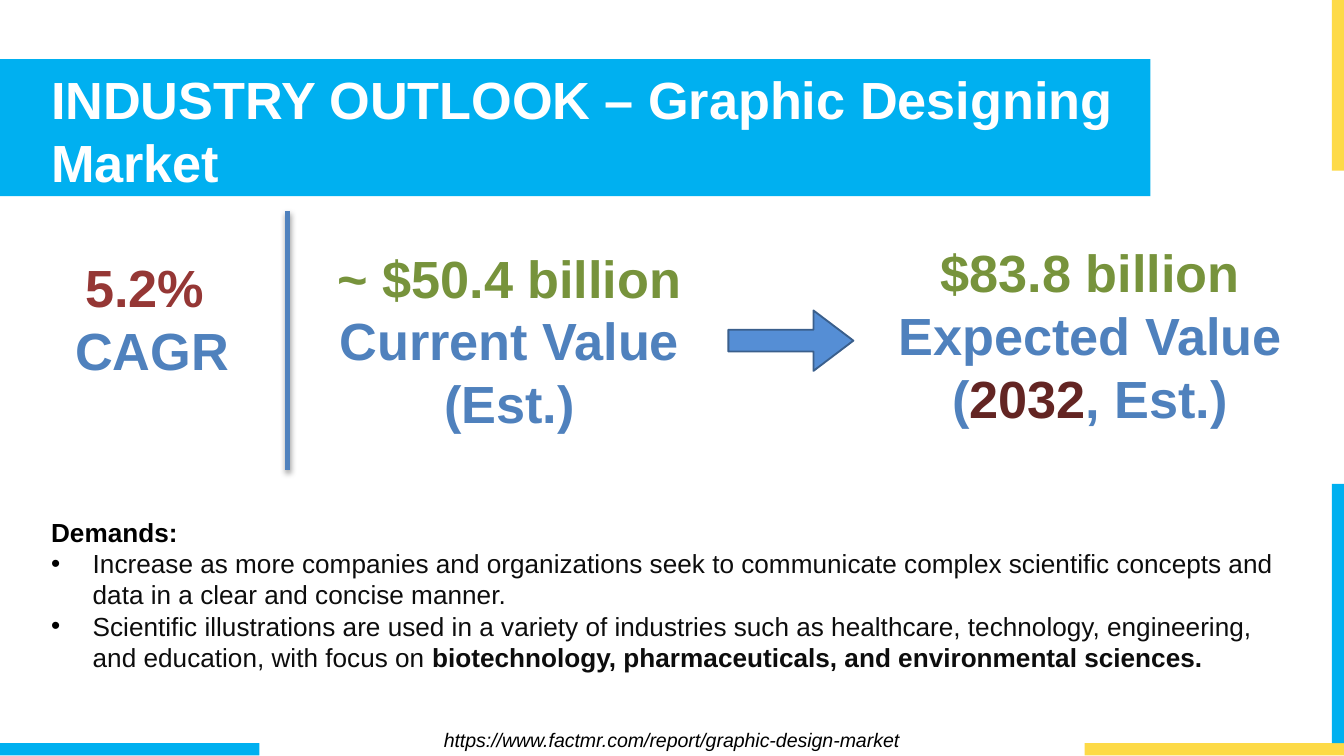
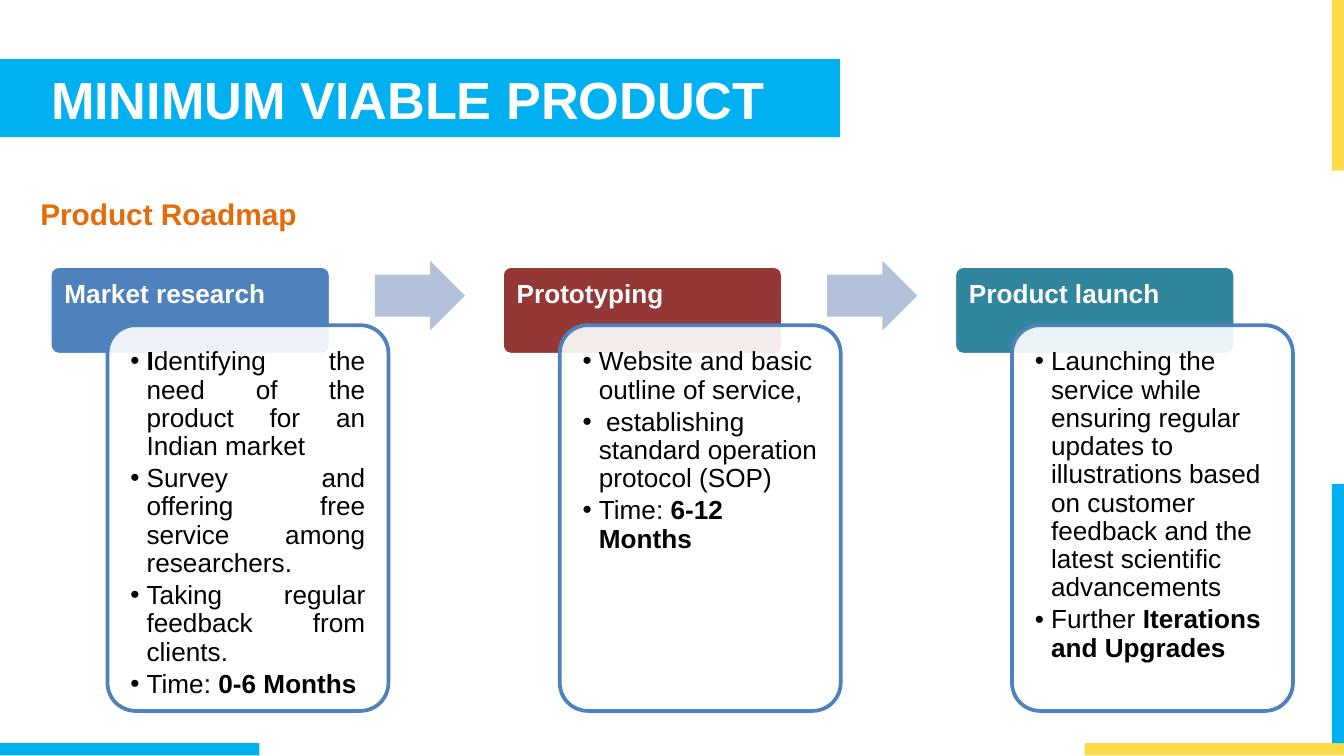
import pptx
import pptx.util
import pptx.dml.color
import pptx.enum.shapes
import pptx.enum.text
from lxml import etree
from pptx.oxml.ns import qn

Inches = pptx.util.Inches
Pt = pptx.util.Pt
RGB = pptx.dml.color.RGBColor
Shape = pptx.enum.shapes.MSO_SHAPE
Align = pptx.enum.text.PP_ALIGN
Anchor = pptx.enum.text.MSO_ANCHOR

FONT = "Arial"
WHITE = RGB(0xFF, 0xFF, 0xFF)
BLACK = RGB(0x00, 0x00, 0x00)
INK = RGB(0x0D, 0x0D, 0x0D)
SKY = RGB(0x00, 0xB0, 0xF0)
YELLOW = RGB(0xFD, 0xDA, 0x47)
BLUE = RGB(0x4F, 0x81, 0xBD)
ARROW = RGB(0x55, 0x8E, 0xD5)
EDGE = RGB(0x3A, 0x5F, 0x8C)
PALE = RGB(0xB3, 0xC1, 0xDB)
RED = RGB(0x95, 0x37, 0x35)
WINE = RGB(0x63, 0x25, 0x23)
GREEN = RGB(0x77, 0x93, 0x3C)
TEAL = RGB(0x31, 0x85, 0x9C)
ORANGE = RGB(0xE4, 0x6C, 0x0A)

# Content: a paragraph is a list of runs, a run is (text, style)
BARS = [
    ((8.07, 5.53, 1.93, 0.09), YELLOW),
    ((9.91, 3.6, 0.09, 1.93), SKY),
    ((0, 5.53, 1.93, 0.09), SKY),
    ((9.91, 0, 0.09, 1.27), YELLOW),
]
FIGURES = [
    ((0.12, 1.85, 2.02, 1.04),
     [[("5.2% ", {"color": RED})], [("CAGR", {"color": BLUE})]]),
    ((2.03, 1.78, 3.52, 1.51),
     [[("~ $50.4 billion", {"color": GREEN})],
      [("Current Value (Est.)", {"color": BLUE})]]),
    ((6.35, 1.74, 3.52, 1.51),
     [[("$83.8 billion", {"color": GREEN})],
      [("Expected Value (", {"color": BLUE}), ("2032", {"color": WINE}),
       (", Est.)", {"color": BLUE})]]),
]
DEMANDS = [
    [("Increase as more companies and organizations seek to communicate "
      "complex scientific concepts and data in a clear and concise manner.", {})],
    [("Scientific illustrations are used in a variety of industries such as "
      "healthcare, technology, engineering, and education, with focus on ", {}),
     ("biotechnology, pharmaceuticals, and environmental sciences.",
      {"bold": True})],
]
SOURCE = "https://www.factmr.com/report/graphic-design-market"
STAGES = [
    ("Market research", BLUE, Align.JUSTIFY, [
        [("I", {"bold": True}),
         ("dentifying the need of the product for an Indian market", {})],
        [("Survey and offering free service among researchers.", {})],
        [("Taking regular feedback from clients.", {})],
        [("Time: ", {}), ("0-6 Months", {"bold": True})],
    ]),
    ("Prototyping", RED, Align.LEFT, [
        [("Website and basic outline of service,", {})],
        [(" establishing standard operation protocol (SOP)", {})],
        [("Time: ", {}), ("6-12 Months", {"bold": True})],
    ]),
    ("Product launch", TEAL, Align.LEFT, [
        [("Launching the service while ensuring regular updates to "
          "illustrations based on customer feedback and the latest "
          "scientific advancements", {})],
        [("Further ", {}), ("Iterations and Upgrades", {"bold": True})],
    ]),
]


def style(font, size=None, color=None, bold=None, italic=None):
    if size:
        font.size, font.name = Pt(size), FONT
    if color is not None:
        font.color.rgb = color
    if bold is not None:
        font.bold = bold
    if italic is not None:
        font.italic = italic


def place(shape, box):
    shape.left, shape.top, shape.width, shape.height = map(Inches, box)


def frame(shape, inset=(0.1, 0.05, 0.1, 0.05)):
    text = shape.text_frame
    text.word_wrap = True
    text.auto_size = pptx.enum.text.MSO_AUTO_SIZE.NONE
    text.vertical_anchor = Anchor.TOP
    (text.margin_left, text.margin_top,
     text.margin_right, text.margin_bottom) = map(Inches, inset)
    return text


def write(text, runs, align=Align.LEFT, indent=0, hang=0, lines=1.0,
          after=0, **font):
    """Fill the empty first paragraph, or add one."""
    para = text.paragraphs[0]
    if para.runs:
        para = text.add_paragraph()
    props = para._p.get_or_add_pPr()
    props.set("marL", str(Inches(indent)))
    props.set("indent", str(-Inches(hang)))
    if hang:
        tint = etree.SubElement(props, qn("a:buClr"))
        etree.SubElement(tint, qn("a:srgbClr"), val=str(BLACK))
        etree.SubElement(props, qn("a:buFont"), typeface=FONT)
        etree.SubElement(props, qn("a:buChar"), char="•")
    else:
        etree.SubElement(props, qn("a:buNone"))
    para.alignment = align
    para.line_spacing = lines
    para.space_before, para.space_after = Pt(0), Pt(after)
    style(para.font, **font)
    for words, look in runs:
        run = para.add_run()
        run.text = words
        style(run.font, **look)


def draw(slide, kind, box, fill, line=None, width=1, adjust=()):
    shape = slide.shapes.add_shape(kind, *map(Inches, box))
    shape.shadow.inherit = False
    shape.fill.solid()
    shape.fill.fore_color.rgb = fill
    if line is None:
        shape.line.fill.background()
    else:
        shape.line.color.rgb = line
        shape.line.width = Pt(width)
    for spot, value in enumerate(adjust):
        shape.adjustments[spot] = value
    return shape


def start(deck, title, wide, high, span):
    """Slide with title band, edge bars, title and body placeholders."""
    slide = deck.slides.add_slide(deck.slide_layouts[1])
    head, body = slide.placeholders
    band = draw(slide, Shape.RECTANGLE, (0, 0.44, wide, high), SKY)
    bars = [draw(slide, Shape.RECTANGLE, box, fill) for box, fill in BARS]
    for shape in [band] + bars:
        head.element.addprevious(shape.element)
    place(head, (0.28, 0.45, span, 0.57))
    write(frame(head), [(title, {})], size=28, color=WHITE, bold=True)
    return slide, body


def outlook(deck):
    slide, body = start(
        deck, "INDUSTRY OUTLOOK – Graphic Designing Market", 8.56, 1.02, 8.19)

    # Demands
    place(body, (0.28, 3.79, 9.44, 1.28))
    text = frame(body)
    write(text, [("Demands:", {})], size=14, color=BLACK, bold=True)
    for runs in DEMANDS:
        write(text, runs, indent=0.31, hang=0.31, size=14, color=INK)

    # Key figures
    for box, rows in FIGURES:
        text = frame(slide.shapes.add_textbox(*map(Inches, box)))
        for runs in rows:
            write(text, runs, align=Align.CENTER, size=28, bold=True)

    # Divider with soft shadow
    rule = slide.shapes.add_connector(
        pptx.enum.shapes.MSO_CONNECTOR.STRAIGHT,
        *map(Inches, (2.14, 1.57, 2.14, 3.5)))
    rule.line.color.rgb = BLUE
    rule.line.width = Pt(3)
    effect = etree.SubElement(rule.element.spPr, qn("a:effectLst"))
    shade = etree.SubElement(
        effect, qn("a:outerShdw"), blurRad=str(Pt(3.1)), dist=str(Pt(1.6)),
        dir="5400000", rotWithShape="0")
    tint = etree.SubElement(shade, qn("a:srgbClr"), val=str(BLACK))
    etree.SubElement(tint, qn("a:alpha"), val="38000")

    draw(slide, Shape.RIGHT_ARROW, (5.42, 2.31, 0.93, 0.45), ARROW,
         line=EDGE, adjust=(0.36, 0.66))

    # Source
    note = slide.shapes.add_textbox(*map(Inches, (2.5, 5.37, 5, 0.28)))
    write(frame(note), [(SOURCE, {})], align=Align.CENTER,
          size=10.5, color=BLACK, italic=True)


def roadmap(deck):
    slide, body = start(deck, "MINIMUM VIABLE PRODUCT", 6.25, 0.58, 6.31)
    place(body, (0.05, 1.27, 9.69, 0.45))
    write(frame(body), [("Product Roadmap", {})], indent=0.15, lines=1.5,
          size=16, color=ORANGE, bold=True)

    # Stages: header, card on top, arrow to the next
    pitch = (7.1 - 0.37) / 2
    for spot, (name, fill, align, rows) in enumerate(STAGES):
        left = 0.37 + spot * pitch
        head = draw(slide, Shape.ROUNDED_RECTANGLE, (left, 1.98, 2.09, 0.66),
                    fill, line=WHITE, width=2, adjust=(0.1,))
        write(frame(head, (0.09, 0.09, 0.09, 0.06)), [(name, {})],
              lines=0.9, after=4.9, size=14, color=WHITE, bold=True)

        card = draw(slide, Shape.ROUNDED_RECTANGLE,
                    (left + 0.43, 2.42, 2.09, 2.87),
                    WHITE, line=BLUE, width=2, adjust=(0.1,))
        tint = card.element.spPr.find(qn("a:solidFill"))[0]
        etree.SubElement(tint, qn("a:alpha"), val="90000")
        text = frame(card, (0.11,) * 4)
        for runs in rows:
            write(text, runs, align=align, indent=0.12, hang=0.12,
                  lines=0.9, after=2.1, size=14, color=BLACK)

        if spot < len(STAGES) - 1:
            draw(slide, Shape.RIGHT_ARROW, (left + 2.42, 1.94, 0.67, 0.52),
                 PALE, adjust=(0.6, 0.5))


def main():
    deck = pptx.Presentation()
    deck.slide_width = Inches(10)
    deck.slide_height = deck.slide_width * 9 // 16
    outlook(deck)
    roadmap(deck)
    deck.save("out.pptx")


if __name__ == "__main__":
    main()
